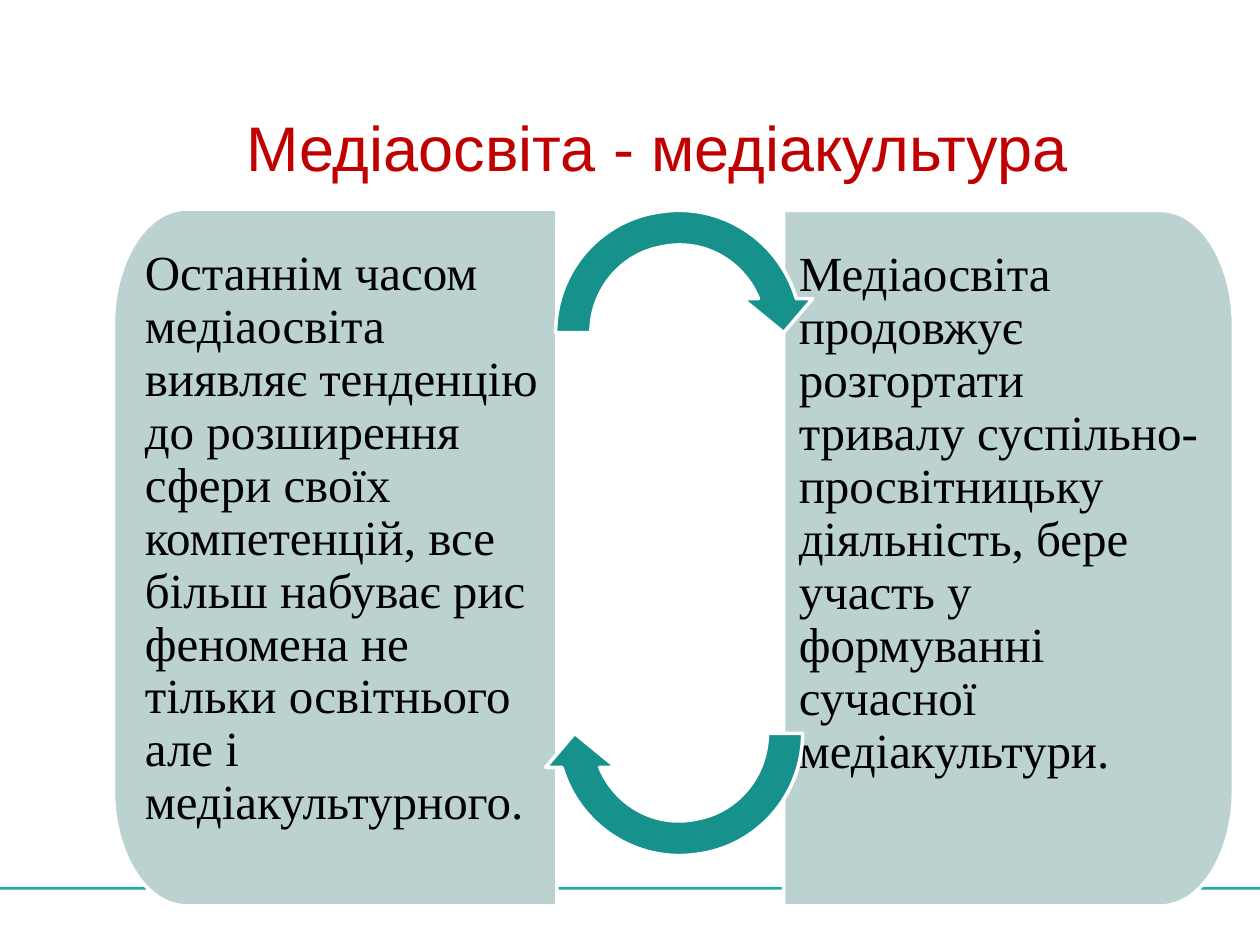
from pptx import Presentation
from pptx.dml.color import RGBColor
from pptx.enum.shapes import MSO_SHAPE
from pptx.enum.text import MSO_ANCHOR, PP_ALIGN
from pptx.oxml.ns import qn
from pptx.oxml.xmlchemy import OxmlElement
from pptx.util import Inches, Pt


def paint(shape, color):
    shape.shadow.inherit = False
    shape.fill.solid()
    shape.fill.fore_color.rgb = RGBColor.from_string(color)


def outline(left, top, width, height, steps, color):
    """Freeform in a box; a step is one point, or three for a curve."""
    right, low = left + width, top + height
    box = [(left, top), (right, top), (right, low), (left, low)]
    box = [(Inches(x), Inches(y)) for x, y in box]
    pen = slide.shapes.build_freeform(*box[0])
    pen.add_line_segments(box[1:], close=True)
    shape = pen.convert_to_shape()
    path = next(shape.element.iter(qn("a:path")))
    for old in list(path):
        path.remove(old)
    for i, step in enumerate(steps):
        tag = "a:cubicBezTo" if len(step) == 3 else "a:lnTo" if i else "a:moveTo"
        node = OxmlElement(tag)
        for x, y in step:
            dot = OxmlElement("a:pt")
            dot.set("x", str(Inches(x - left)))
            dot.set("y", str(Inches(y - top)))
            node.append(dot)
        path.append(node)
    path.append(OxmlElement("a:close"))
    paint(shape, color)
    shape.line.color.rgb = RGBColor.from_string("FFFFFF")
    shape.line.width = Pt(2)
    return shape


prs = Presentation()
prs.slide_width, prs.slide_height = Inches(10), Inches(7.5)
slide = prs.slides.add_slide(prs.slide_layouts[5])

# Footer rule
rule = slide.shapes.add_shape(
    MSO_SHAPE.RECTANGLE, 0, Inches(7.04), Inches(10), Inches(0.02))
paint(rule, "1AACA6")
rule.line.fill.background()

# Title
title = slide.shapes.title
title.left, title.top = Inches(1.28), Inches(0.31)
title.width, title.height = Inches(7.87), Inches(1.2)
title.text_frame.text = "Медіаосвіта - медіакультура"
title.text_frame.vertical_anchor = MSO_ANCHOR.BOTTOM
par = title.text_frame.paragraphs[0]
par.alignment = PP_ALIGN.CENTER
par.line_spacing = 0.85
par.font.name, par.font.size = "Arial", Pt(36)
par.font.color.rgb = RGBColor.from_string("C00000")

# Panels: outer edge, inner edge, top, left and right inset, text
panels = [
    (0.9, 4.42, 1.66, 0.25, 0.12,
     "Останнім часом медіаосвіта виявляє тенденцію до розширення сфери своїх "
     "компетенцій, все більш набуває рис феномена не тільки освітнього але і "
     "медіакультурного."),
    (9.79, 6.22, 1.67, 0.12, 0.25,
     "Медіаосвіта продовжує розгортати тривалу суспільно-просвітницьку "
     "діяльність, бере участь у формуванні сучасної медіакультури."),
]
base = 7.19
for outer, inner, top, left, right, text in panels:
    side = 1 if outer < inner else -1
    near, far = outer + side * 0.26, outer + side * 0.58
    steps = [
        [(outer, base - 0.92)],
        [(outer, top + 0.92)],
        [(outer, top + 0.41), (near, top), (far, top)],
        [(inner, top)],
        [(inner, base)],
        [(far, base)],
        [(near, base), (outer, base - 0.41), (outer, base - 0.92)],
    ]
    panel = outline(min(outer, inner), top, abs(outer - inner), base - top,
                    steps, "BCD2D0")
    frame = panel.text_frame
    frame.word_wrap = True
    frame.vertical_anchor = MSO_ANCHOR.TOP
    frame.margin_left, frame.margin_right = Inches(left), Inches(right)
    frame.margin_top = frame.margin_bottom = Inches(0.31)
    frame.text = text
    par = frame.paragraphs[0]
    par.alignment = PP_ALIGN.LEFT
    par.line_spacing = 0.9
    par.space_after = Pt(8)
    par.font.name, par.font.size = "Times New Roman", Pt(28)
    par.font.color.rgb = RGBColor.from_string("000000")

# Curved arrows: the lower one is the upper one turned by 180 degrees
curve = [
    [(4.41, 2.64)],
    [(4.41, 2.15), (4.77, 1.74), (5.25, 1.68)],
    [(5.72, 1.61), (6.18, 1.9), (6.32, 2.37)],
    [(6.45, 2.37)],
    [(6.22, 2.64)],
    [(5.89, 2.37)],
    [(6.02, 2.37)],
    [(5.89, 2.06), (5.57, 1.89), (5.25, 1.96)],
    [(4.92, 2.02), (4.69, 2.31), (4.69, 2.64)],
]
for top, turn in [(1.53, 0), (4.71, 180)]:
    arrow = outline(4.28, 1.53, 2.22, 2.22, curve, "17918B")
    arrow.top, arrow.rotation = Inches(top), turn

prs.save("out.pptx")
